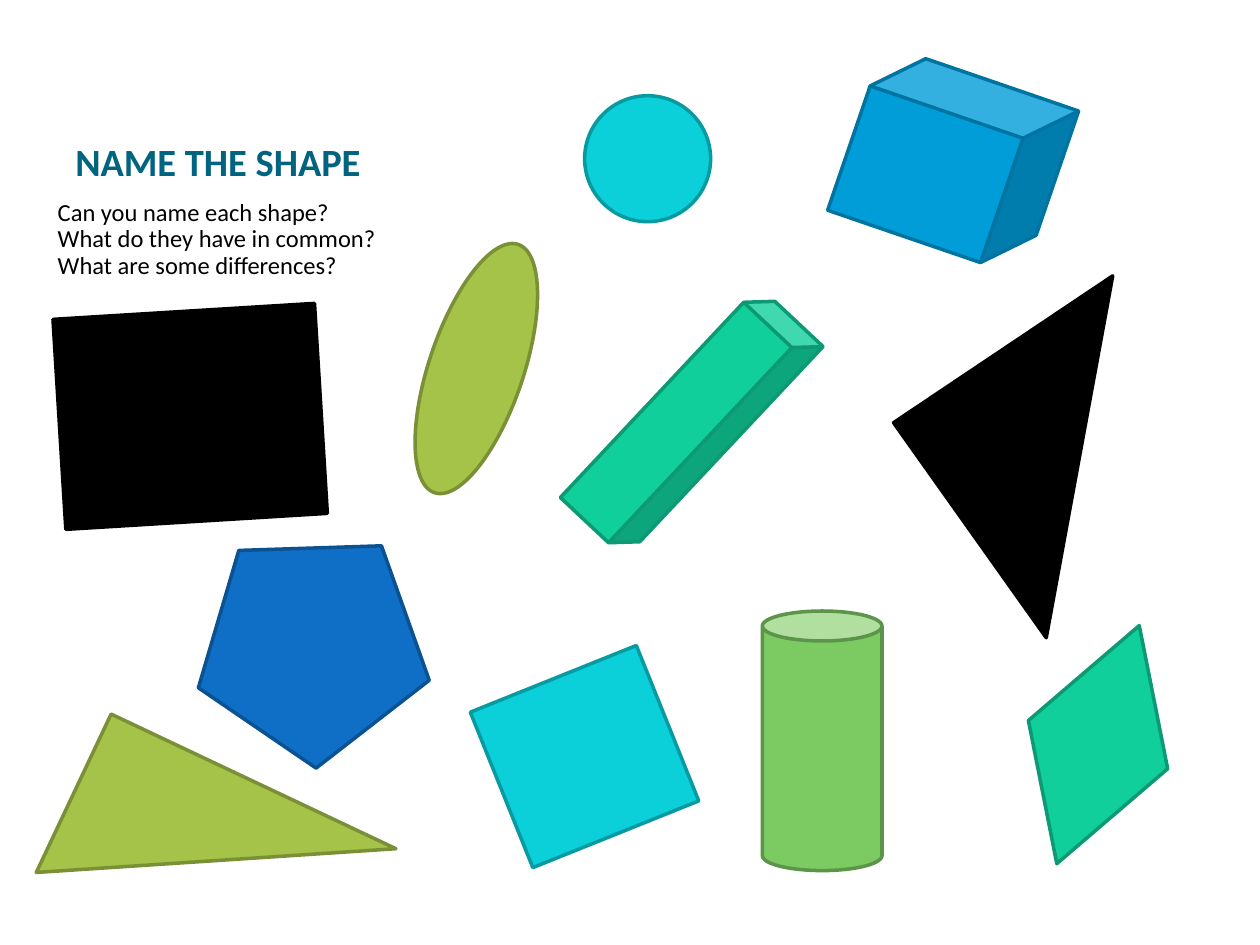
from lxml import etree
from pptx import Presentation
from pptx.dml.color import RGBColor
from pptx.enum import shapes, text
from pptx.oxml.ns import qn
from pptx.util import Inches, Pt

FONT = "Calibri"
BLACK = RGBColor(0x00, 0x00, 0x00)
TITLE_TEAL = RGBColor(0x00, 0x63, 0x7F)
CYAN = RGBColor(0x0B, 0xD0, 0xD9)
DARK_CYAN = RGBColor(0x08, 0x9A, 0xA1)
MINT = RGBColor(0x10, 0xCF, 0x9B)
DARK_MINT = RGBColor(0x0C, 0x99, 0x73)
BLUE = RGBColor(0x0F, 0x6F, 0xC6)
DARK_BLUE = RGBColor(0x0B, 0x52, 0x92)
OLIVE = RGBColor(0xA5, 0xC2, 0x49)
DARK_OLIVE = RGBColor(0x7A, 0x90, 0x36)
SKY = RGBColor(0x00, 0x9D, 0xD9)
DARK_SKY = RGBColor(0x00, 0x74, 0xA1)
GREEN = RGBColor(0x7C, 0xCA, 0x62)
DARK_GREEN = RGBColor(0x5C, 0x95, 0x49)

KIND = shapes.MSO_SHAPE
FIGURES = [
    (KIND.RECTANGLE, (0.47, 2.47, 2.08, 1.67), 356.5, BLACK, BLACK),
    (KIND.ISOSCELES_TRIANGLE, (6.37, 2.74, 2.92, 1.5), 280.4, BLACK, BLACK),
    (KIND.OVAL, (4.64, 0.76, 1, 1), 0, CYAN, DARK_CYAN),
    (KIND.DIAMOND, (8.13, 4.91, 1.17, 2), 19.1, MINT, DARK_MINT),
    (KIND.RECTANGLE, (3.93, 5.34, 1.42, 1.33), 338.1, CYAN, DARK_CYAN),
    (KIND.REGULAR_PENTAGON, (1.62, 4.18, 1.83, 1.75), 34.3, BLUE, DARK_BLUE),
    (KIND.RIGHT_TRIANGLE, (1.02, 5.58, 1.39, 2.5), 115.3, OLIVE, DARK_OLIVE),
    (KIND.CUBE, (6.75, 0.58, 1.63, 1.39), 18.9, SKY, DARK_SKY),
    (KIND.CAN, (6.05, 4.85, 0.95, 2.06), 0, GREEN, DARK_GREEN),
    (KIND.OVAL, (2.74, 2.55, 2.08, 0.75), 108.6, OLIVE, DARK_OLIVE),
    (KIND.CUBE, (5.14, 2.2, 0.7, 2.3), 43.2, MINT, DARK_MINT),
]
QUESTIONS = [
    "Can you name each shape?",
    "What do they have in common?",
    "What are some differences?",
]


def add_text(page, lines, place, *, size, color, spacing, bold=False,
             indent=0, anchor=text.MSO_ANCHOR.TOP):
    box = page.shapes.add_textbox(*map(Inches, place))
    frame = box.text_frame
    frame.word_wrap = True
    frame.vertical_anchor = anchor
    for index, line in enumerate(lines):
        para = frame.add_paragraph() if index else frame.paragraphs[0]
        para.line_spacing = spacing
        if indent:
            para._p.get_or_add_pPr().set("marL", str(Inches(indent)))
        span = para.add_run()
        span.text = line
        span.font.name = FONT
        span.font.size = Pt(size)
        span.font.bold = bold
        span.font.color.rgb = color


def add_figure(page, kind, place, rotation, fill, outline):
    figure = page.shapes.add_shape(kind, *map(Inches, place))
    figure.rotation = rotation
    figure.shadow.inherit = False
    figure.fill.solid()
    figure.fill.fore_color.rgb = fill
    figure.line.color.rgb = outline
    figure.line.width = Pt(2)
    etree.SubElement(figure.line._get_or_add_ln(), qn("a:round"))


def main():
    deck = Presentation()
    deck.slide_width = Inches(10)
    deck.slide_height = Inches(7.5)
    page = deck.slides.add_slide(deck.slide_layouts[6])
    add_text(page, ["NAME THE SHAPE"], (0.5, 0.24, 4.17, 1.27), size=22,
             color=TITLE_TEAL, spacing=Pt(20), bold=True,
             anchor=text.MSO_ANCHOR.BOTTOM)
    add_text(page, QUESTIONS, (0.31, 1.54, 4.17, 0.76), size=14,
             color=BLACK, spacing=0.9, indent=0.05)
    for figure in FIGURES:
        add_figure(page, *figure)
    deck.save("out.pptx")


if __name__ == "__main__":
    main()
